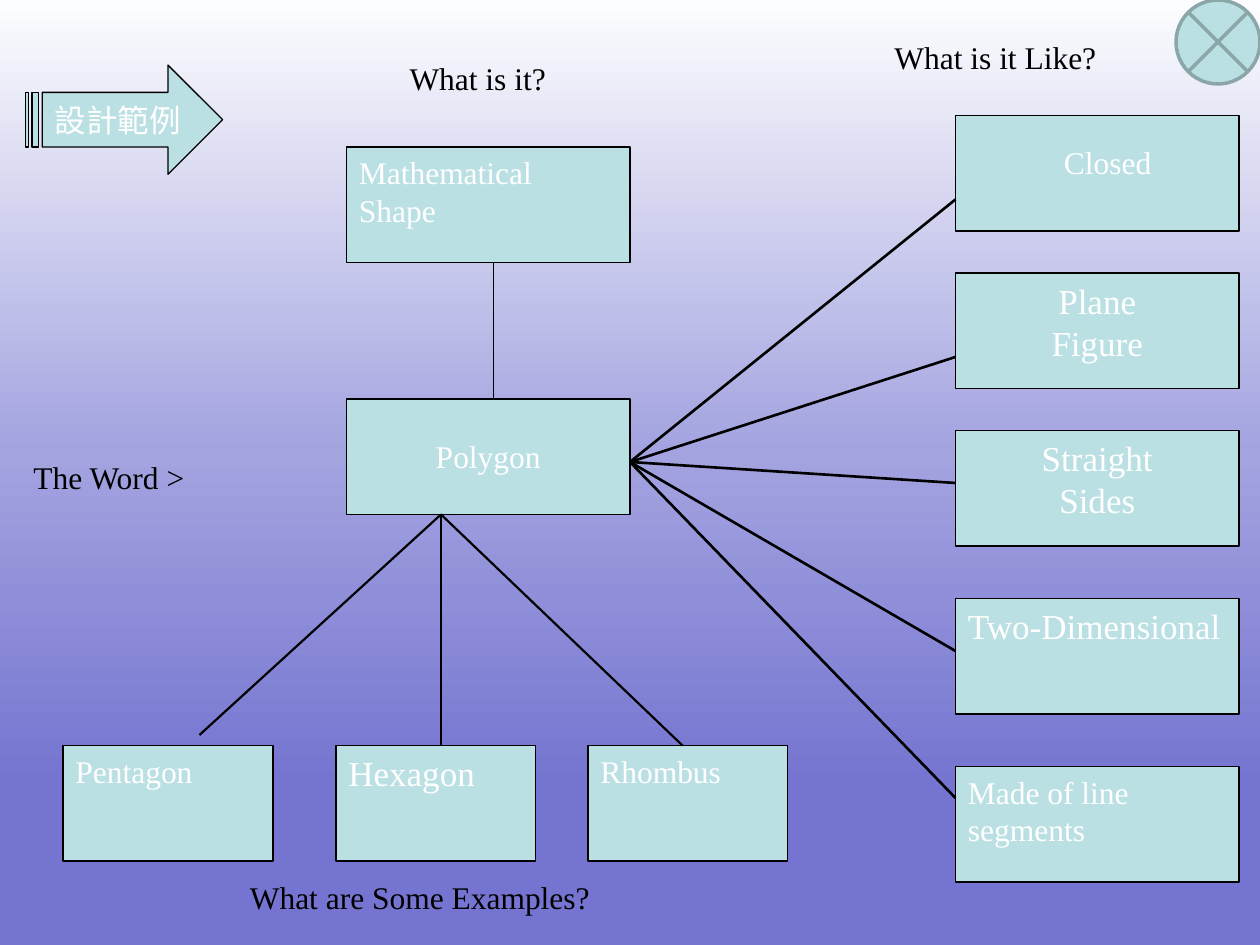
from copy import deepcopy

from lxml.etree import SubElement
from pptx import Presentation
from pptx.dml.color import RGBColor
from pptx.enum.shapes import MSO_CONNECTOR, MSO_SHAPE
from pptx.enum.text import MSO_ANCHOR, PP_ALIGN
from pptx.oxml.ns import qn
from pptx.util import Pt

EMU_PER_PX = 7620
BLACK, WHITE, PALE_TEAL, GREY_TEAL = "000000", "FFFFFF", "BBE0E3", "8AA6A8"
LEFT, CENTER = PP_ALIGN.LEFT, PP_ALIGN.CENTER


def px(*lengths):
    return [length * EMU_PER_PX for length in lengths]


def rgb(hex_color):
    return RGBColor.from_string(hex_color)


class ConceptMap:
    font = "Times New Roman"

    def __init__(self, slide):
        self.slide = slide

    def background(self, stops):
        fill = self.slide.background.fill
        fill.gradient()
        fill.gradient_angle = 270
        stop_list = self.slide._element.find(".//" + qn("a:gsLst"))
        template = deepcopy(stop_list[0])
        for stop in list(stop_list):
            stop_list.remove(stop)
        for percent, color in stops:
            stop = deepcopy(template)
            for child in list(stop):
                stop.remove(child)
            stop.set("pos", str(percent * 1000))
            SubElement(stop, qn("a:srgbClr")).set("val", color)
            stop_list.append(stop)

    def fill_text(self, frame, lines, size, color, align):
        frame.word_wrap = True
        for index, line in enumerate(lines):
            paragraph = frame.add_paragraph() if index else frame.paragraphs[0]
            paragraph.text = line
            paragraph.alignment = align
            paragraph.font.name = self.font
            paragraph.font.size = Pt(size)
            paragraph.font.color.rgb = rgb(color)

    def text(self, box, lines, size=18, color=BLACK, align=LEFT):
        frame = self.slide.shapes.add_textbox(*px(*box)).text_frame
        self.fill_text(frame, lines, size, color, align)

    def shape(self, kind, box, line=BLACK, weight=0.75):
        shape = self.slide.shapes.add_shape(kind, *px(*box))
        shape.shadow.inherit = False
        shape.fill.solid()
        shape.fill.fore_color.rgb = rgb(PALE_TEAL)
        shape.line.color.rgb = rgb(line)
        shape.line.width = Pt(weight)
        return shape

    def line(self, start, end, weight):
        line = self.slide.shapes.add_connector(MSO_CONNECTOR.STRAIGHT, *px(*start, *end))
        line.line.color.rgb = rgb(BLACK)
        line.line.width = Pt(weight)
        SubElement(line._element.spPr, qn("a:effectLst"))


def main():
    deck = Presentation()
    deck.slide_width, deck.slide_height = px(1200, 900)
    concept = ConceptMap(deck.slides.add_slide(deck.slide_layouts[6]))
    concept.background([(0, "FCFDFE"), (48, "A3A3E0"), (83, "7575D1"), (100, "7575D1")])

    concept.text((50, 830, 700, 48), ["What are Some Examples?"], align=CENTER)
    concept.text((20, 430, 280, 48), ["The Word >"])
    concept.text((300, 50, 310, 48), ["What is it?"], align=CENTER)
    concept.text((840, 30, 380, 48), ["What is it Like?"])

    box_height = 110
    nodes = [
        (330, 140, 270, 0, 280, ["Mathematical", "Shape"], 18, LEFT),
        (330, 380, 270, 30, 270, ["Polygon"], 18, CENTER),
        (910, 110, 270, 20, 290, ["Closed"], 18, CENTER),
        (910, 260, 270, 0, 270, ["Plane", "Figure"], 20, CENTER),
        (910, 410, 270, 0, 270, ["Straight", "Sides"], 20, CENTER),
        (910, 570, 270, 0, 270, ["Two-Dimensional"], 20, LEFT),
        (910, 730, 270, 0, 270, ["Made of line segments"], 18, LEFT),
        (60, 710, 200, 0, 200, ["Pentagon"], 18, LEFT),
        (320, 710, 190, 0, 190, ["Hexagon"], 20, LEFT),
        (560, 710, 190, 0, 190, ["Rhombus"], 18, LEFT),
    ]
    for left, top, width, *_ in nodes:
        concept.shape(MSO_SHAPE.RECTANGLE, (left, top, width, box_height))

    concept.line((470, 250), (470, 380), 1)
    for example_end in [(190, 700), (420, 710), (650, 710)]:
        concept.line((420, 490), example_end, 1.25)
    for property_y in [190, 340, 460, 620, 760]:
        concept.line((600, 440), (910, property_y), 1.5)

    for left, top, _, drop, text_width, lines, size, align in nodes:
        text_box = (left, top + drop, text_width, 48 * len(lines))
        concept.text(text_box, lines, size, WHITE, align)

    banner = concept.shape(MSO_SHAPE.STRIPED_RIGHT_ARROW, (24, 62, 188, 104))
    banner.text_frame.vertical_anchor = MSO_ANCHOR.MIDDLE
    concept.fill_text(banner.text_frame, ["設計範例"], 18, WHITE, LEFT)
    concept.shape(MSO_SHAPE.FLOWCHART_SUMMING_JUNCTION, (1120, 0, 80, 80), GREY_TEAL, 2)

    deck.save("out.pptx")


if __name__ == "__main__":
    main()
